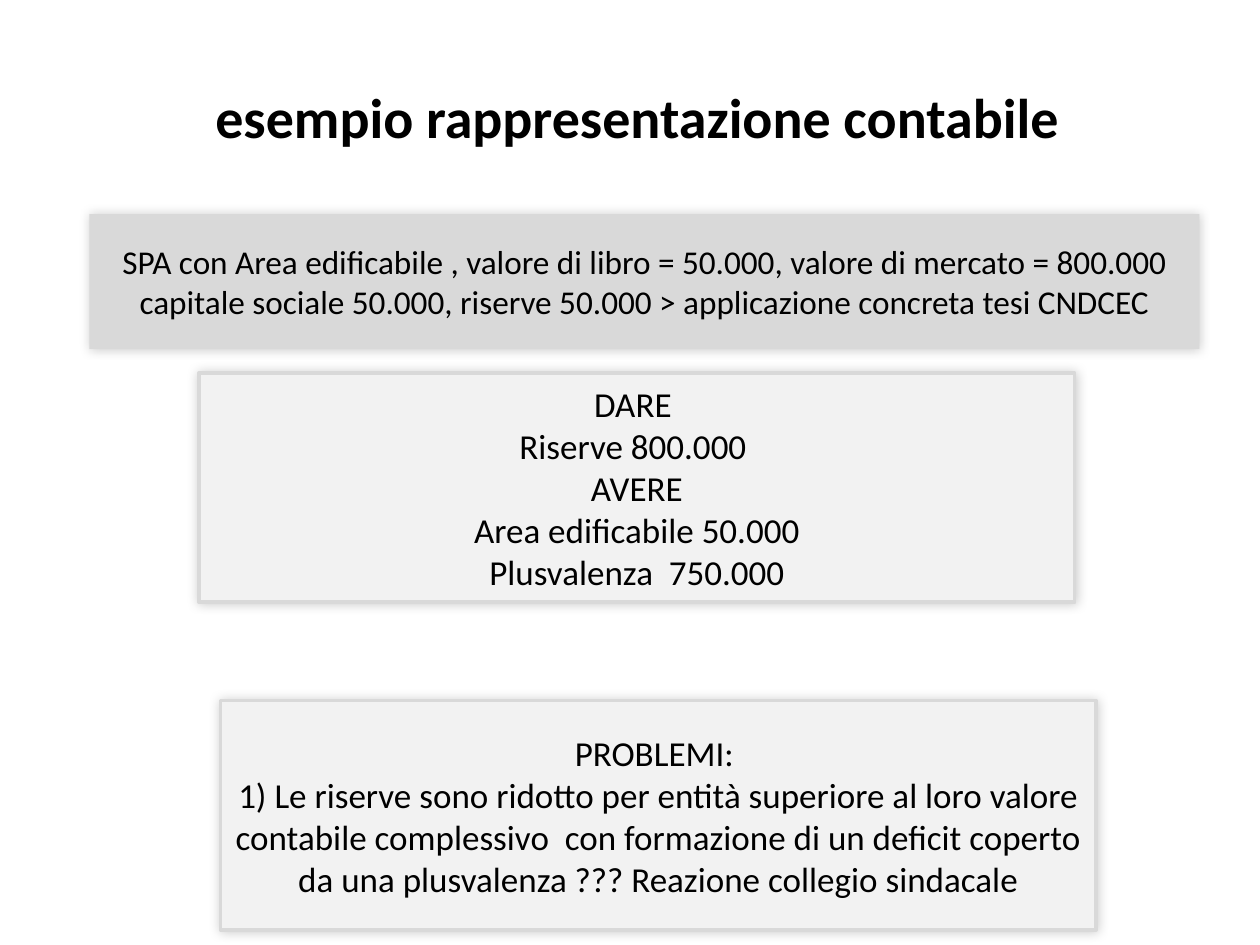
from dataclasses import dataclass

from lxml.etree import SubElement
from pptx import Presentation
from pptx.dml.color import RGBColor
from pptx.enum.shapes import MSO_SHAPE
from pptx.enum.text import MSO_ANCHOR, MSO_AUTO_SIZE, PP_ALIGN
from pptx.oxml.ns import qn
from pptx.util import Inches, Pt


@dataclass(frozen=True)
class Theme:
    font: str = "Calibri"
    text: str = "000000"
    band: str = "D9D9D9"
    panel: str = "F2F2F2"
    border: str = "D9D9D9"
    shadow: str = "000000"
    title_size: int = 32
    band_size: int = 19
    panel_size: int = 20
    border_width: int = 2


class SlideBuilder:
    def __init__(self, page, theme):
        self.page = page
        self.theme = theme

    def set_text(self, shape, lines, size, bold=False):
        frame = shape.text_frame
        frame.text = "\n".join(lines)
        frame.word_wrap = True
        frame.auto_size = MSO_AUTO_SIZE.NONE
        frame.vertical_anchor = MSO_ANCHOR.MIDDLE
        for paragraph in frame.paragraphs:
            paragraph.alignment = PP_ALIGN.CENTER
            for span in paragraph.runs:
                span.font.name = self.theme.font
                span.font.size = Pt(size)
                span.font.bold = bold
                span.font.color.rgb = RGBColor.from_string(self.theme.text)

    def title(self, text, left, top, width, height):
        title = self.page.shapes.title
        title.left, title.top = Inches(left), Inches(top)
        title.width, title.height = Inches(width), Inches(height)
        self.set_text(title, [text], self.theme.title_size, bold=True)

    def soft_shadow(self, shape):
        """Give the shape a faint, blurred shadow without offset."""
        shape.shadow.inherit = False
        effects = shape.element.spPr.find(qn("a:effectLst"))
        shadow = SubElement(effects, qn("a:outerShdw"), blurRad=str(Pt(6)),
                            dist="0", dir=str(225 * 60000), rotWithShape="0")
        color = SubElement(shadow, qn("a:srgbClr"), val=self.theme.shadow)
        SubElement(color, qn("a:alpha"), val="20000")

    def box(self, lines, left, top, width, height, fill, size, border=None):
        box = self.page.shapes.add_shape(
            MSO_SHAPE.RECTANGLE,
            Inches(left), Inches(top), Inches(width), Inches(height))
        box.fill.solid()
        box.fill.fore_color.rgb = RGBColor.from_string(fill)
        if border:
            box.line.color.rgb = RGBColor.from_string(border)
            box.line.width = Pt(self.theme.border_width)
        else:
            box.line.fill.background()
        self.soft_shadow(box)
        self.set_text(box, lines, size)

    def band(self, text, left, top, width, height):
        self.box([text], left, top, width, height,
                 self.theme.band, self.theme.band_size)

    def panel(self, lines, left, top, width=6.95, height=1.82):
        self.box(lines, left, top, width, height,
                 self.theme.panel, self.theme.panel_size, self.theme.border)


def main():
    deck = Presentation()
    deck.slide_width, deck.slide_height = Inches(10), Inches(7.5)
    title_only = deck.slide_layouts[5]
    builder = SlideBuilder(deck.slides.add_slide(title_only), Theme())

    builder.title(" esempio rappresentazione contabile ", 0.12, 0.21, 9.88, 1.42)
    builder.band(
        "SPA con Area edificabile , valore di libro = 50.000, "
        "valore di mercato = 800.000 capitale sociale 50.000, "
        "riserve 50.000 > applicazione concreta tesi CNDCEC",
        0.71, 1.7, 8.81, 1.07)
    builder.panel(
        ["DARE ", "Riserve 800.000 ", "AVERE",
         "Area edificabile 50.000", "Plusvalenza  750.000"],
        1.58, 2.96)
    builder.panel(
        ["PROBLEMI: ",
         "1) Le riserve sono ridotto per entità superiore al loro valore "
         "contabile complessivo  con formazione di un deficit coperto "
         "da una plusvalenza ??? Reazione collegio sindacale"],
        1.75, 5.56)

    deck.save("out.pptx")


if __name__ == "__main__":
    main()
